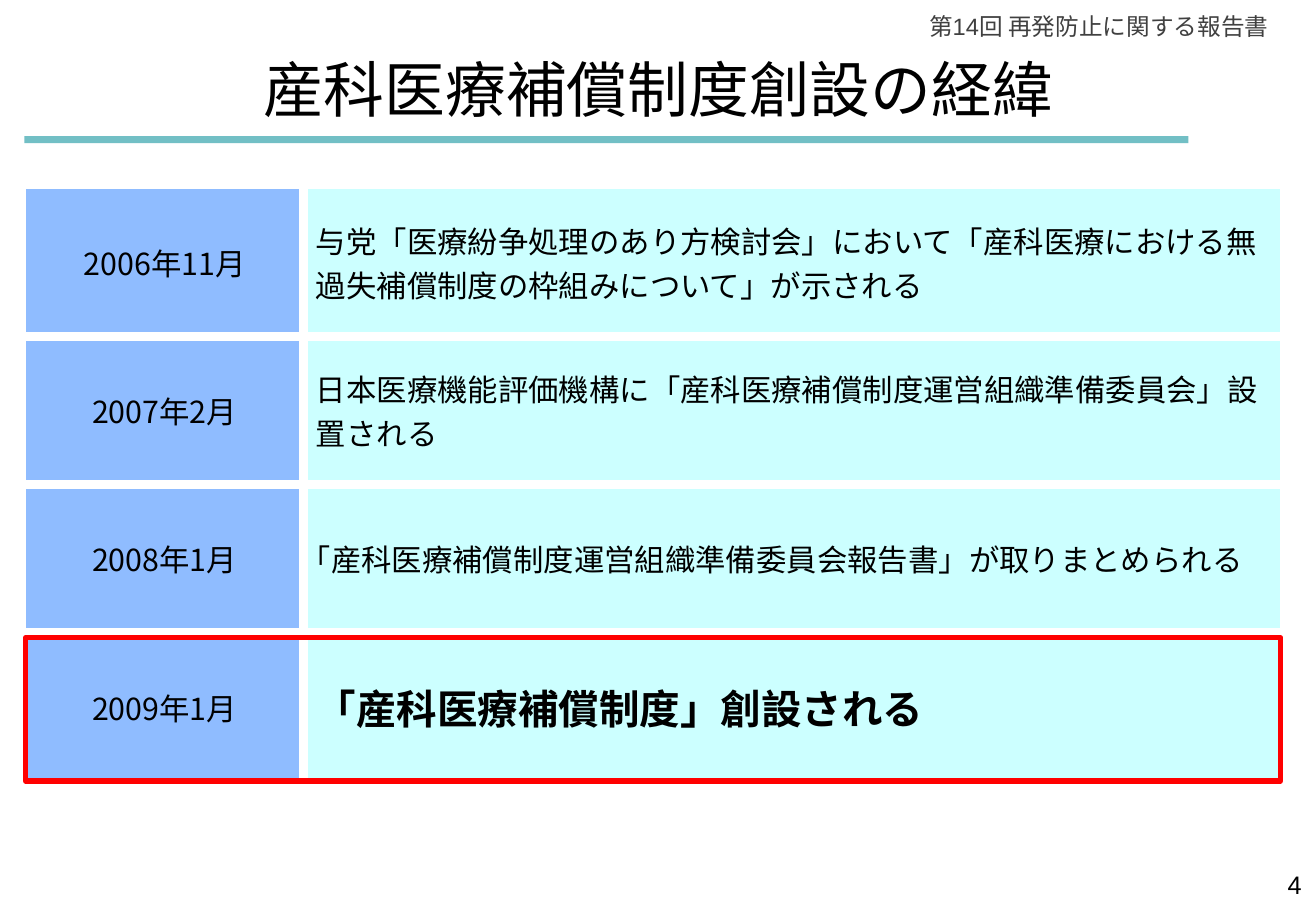
from lxml import etree
from pptx import Presentation
from pptx import util as u
from pptx.dml.color import RGBColor
from pptx.enum import shapes, text
from pptx.oxml.ns import qn

BLACK = RGBColor(0x00, 0x00, 0x00)
GREY = RGBColor(0x40, 0x40, 0x40)
WHITE = RGBColor(0xFF, 0xFF, 0xFF)
TEAL = RGBColor(0x72, 0xBF, 0xC5)
BLUE = RGBColor(0x8F, 0xBC, 0xFF)
CYAN = RGBColor(0xCC, 0xFF, 0xFF)
RED = RGBColor(0xFF, 0x00, 0x00)
GOTHIC = "Noto Sans CJK JP"
ALIGN = text.PP_ALIGN

LEFT, TOP, ROW = 0.21, 1.55, 1.22
COLUMNS = [2.29, 8.04]
WIDTH = sum(COLUMNS)


def write(frame, words, align, size, color=BLACK, name=GOTHIC, bold=False):
    para = frame.paragraphs[0]
    para.alignment = align
    span = para.add_run()
    span.text = words
    span.font.color.rgb = color
    for key, value in {"size": u.Pt(size), "name": name, "bold": bold}.items():
        setattr(span.font, key, value)
    east = etree.SubElement(span.font._element, qn("a:ea"))
    east.set("typeface", GOTHIC)


def add_border(cell, side, points):
    line = etree.SubElement(cell._tc.get_or_add_tcPr(), qn(f"a:ln{side}"), w=str(u.Pt(points)))
    fill = etree.SubElement(line, qn("a:solidFill"))
    etree.SubElement(fill, qn("a:srgbClr"), val=str(WHITE))


deck = Presentation()
deck.slide_width, deck.slide_height = u.Inches(10.83), u.Inches(7.5)
page = deck.slides.add_slide(deck.slide_layouts[6])

rule = page.shapes.add_shape(
    shapes.MSO_SHAPE.RECTANGLE, u.Inches(0.2), u.Inches(1.12), u.Inches(9.58), u.Inches(0.06))
rule.shadow.inherit = False
rule.fill.solid()
rule.fill.fore_color.rgb = TEAL
rule.line.fill.background()

labels = [
    ((7.38, 0.05, 3.16, 0.34), "第14回 再発防止に関する報告書", ALIGN.RIGHT, 14, GREY, "Arial"),
    ((2.06, 0.38, 6.71, 0.7), "産科医療補償制度創設の経緯", ALIGN.CENTER, 36, BLACK, GOTHIC),
    ((8.28, 7.11, 2.53, 0.35), "4", ALIGN.RIGHT, 15, BLACK, "Arial"),
]
for place, words, align, size, color, name in labels:
    box = page.shapes.add_textbox(*map(u.Inches, place))
    box.text_frame.word_wrap = True
    write(box.text_frame, words, align, size, color, name)

events = [
    ("2006年11月", "与党「医療紛争処理のあり方検討会」において「産科医療における無過失補償制度の枠組みについて」が示される"),
    ("2007年2月", "日本医療機能評価機構に「産科医療補償制度運営組織準備委員会」設置される"),
    ("2008年1月", "｢産科医療補償制度運営組織準備委員会報告書」が取りまとめられる"),
    ("2009年1月", "「産科医療補償制度」創設される"),
]
last = len(events) - 1
history = page.shapes.add_table(
    len(events), len(COLUMNS), u.Inches(LEFT), u.Inches(TOP),
    u.Inches(WIDTH), u.Inches(ROW * len(events))).table
history.first_row = history.horz_banding = False
for column, width in zip(history.columns, COLUMNS):
    column.width = u.Inches(width)
for r, event in enumerate(events):
    history.rows[r].height = u.Inches(ROW)
    for c, words in enumerate(event):
        cell = history.cell(r, c)
        cell.vertical_anchor = text.MSO_ANCHOR.MIDDLE
        outer = {"L": c == 0, "R": c == 1, "T": r == 0, "B": r == last}
        for side, edge in outer.items():
            add_border(cell, side, 1 if edge else 6)
        cell.fill.solid()
        cell.fill.fore_color.rgb = (BLUE, CYAN)[c]
        founding = r == last and c == 1
        write(cell.text_frame, words, (ALIGN.CENTER, ALIGN.LEFT)[c],
              24 if founding else 18, bold=founding)

highlight = page.shapes.add_shape(
    shapes.MSO_SHAPE.RECTANGLE, u.Inches(LEFT), u.Inches(5.25), u.Inches(WIDTH), u.Inches(1.18))
highlight.shadow.inherit = False
highlight.fill.background()
highlight.line.color.rgb = RED
highlight.line.width = u.Pt(3)

deck.save("out.pptx")
